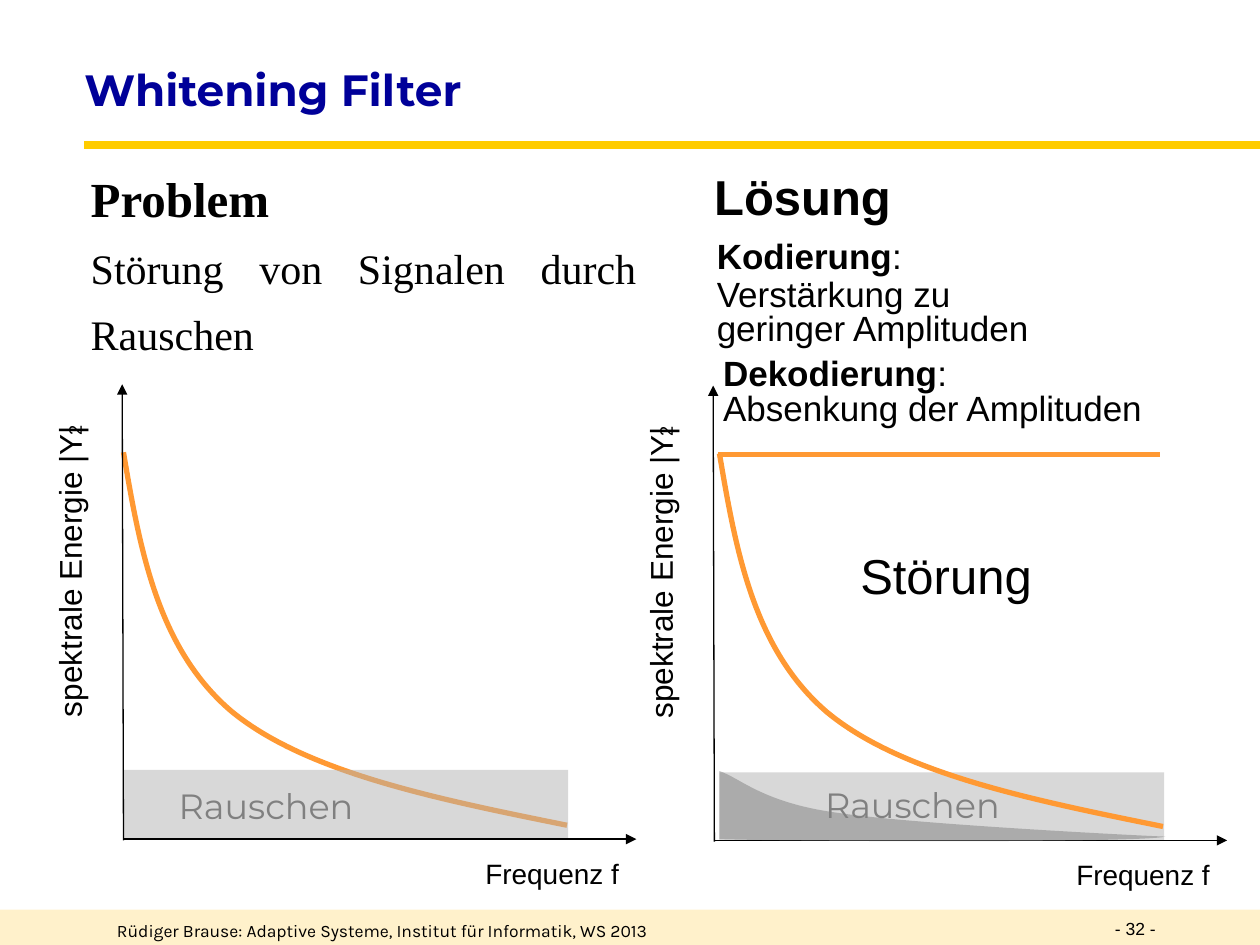
"""Build the slide on the whitening filter with its two spectral plots."""
from dataclasses import dataclass, field
from typing import Any, NamedTuple

import pptx
import pptx.dml.color
import pptx.enum.shapes
import pptx.enum.text
import pptx.oxml.ns
import pptx.util
from lxml import etree

Inches = pptx.util.Inches
Pt = pptx.util.Pt
RGB = pptx.dml.color.RGBColor
Align = pptx.enum.text.PP_ALIGN
Anchor = pptx.enum.text.MSO_ANCHOR
qn = pptx.oxml.ns.qn

BLACK = RGB(0x00, 0x00, 0x00)
NAVY = RGB(0x00, 0x00, 0x99)
GOLD = RGB(0xFF, 0xCC, 0x00)
CREAM = RGB(0xFF, 0xE4, 0x99)
ORANGE = RGB(0xFF, 0x99, 0x33)
SILVER = RGB(0xB2, 0xB2, 0xB2)
GRAY = RGB(0x80, 0x80, 0x80)

Box = tuple[float, float, float, float]
Point = tuple[float, float]


class Run(NamedTuple):
    text: str
    bold: bool = False
    raised: bool = False


@dataclass
class Para:
    runs: list[Run]
    size: float
    form: dict[str, Any] = field(default_factory=dict)


@dataclass
class Label:
    box: Box
    paras: list[Para]
    face: str = "Arial"
    tone: RGB = BLACK
    wrap: bool = True
    upright: bool = False


class Plot(NamedTuple):
    left: float
    base: float
    curve: float
    drop: float
    band: float


NEAR = Plot(0.98, 6.66, 0.98, 3.59, 6.11)
FAR = Plot(5.67, 6.67, 5.71, 3.60, 6.13)
DECAY = [(0, 0), (0.13, 0.77), (0.27, 1.55), (0.85, 2.05),
         (1.44, 2.54), (2.48, 2.75), (3.52, 2.96)]
RESIDUE = [(5.71, 6.12), (5.87, 6.17), (6.05, 6.37), (6.64, 6.45),
           (7.23, 6.54), (8.99, 6.63), (9.25, 6.64),
           (9.05, 6.69), (6.32, 6.68), (5.71, 6.66),
           (5.71, 6.11), (5.71, 6.29), (5.71, 6.12)]
RIGHT = {"alignment": Align.RIGHT}


def line(text: str, size: float, bold: bool = False, **form: Any) -> Para:
    return Para([Run(text, bold)], size, form)


def head(text: str) -> Para:
    return Para([Run(text, True), Run(":")], 20)


LABELS = [
    Label((0.83, 7.25, 5.42, 0.25),
          [line("Rüdiger Brause: Adaptive Systeme, Institut für Informatik, WS 2013", 10)], "Karla"),
    Label((8.75, 7.24, 0.75, 0.26), [line("- 32 -", 10)]),
    Label((5.57, 1.27, 4.23, 0.57), [line("Lösung", 28, True)]),
    Label((5.59, 1.81, 2.69, 1.03), [head("Kodierung")] + [
        line(text, 20, line_spacing=0.4, space_before=Pt(10))
        for text in ("Verstärkung zu", "geringer Amplituden")]),
    Label((5.64, 2.74, 3.54, 0.7), [
        head("Dekodierung"),
        line("Absenkung der Amplituden", 20, line_spacing=0.3, space_before=Pt(10))], wrap=False),
    Label((6.73, 4.28, 1.57, 0.57), [line("Störung", 28)], wrap=False),
    *(Label((left, top, 1.81, 0.43), [line("Rauschen", 20)], "Montserrat", GRAY)
      for left, top in ((1.32, 6.18), (6.45, 6.17))),
]
TITLE = Label((0.67, 0.43, 7.24, 0.55), [
    line("Whitening Filter", 25, True, alignment=Align.LEFT)], "Montserrat", NAVY)
BODY = Label((0.62, 1.29, 4.53, 1.48), [
    line("Problem", 28, True, alignment=Align.JUSTIFY, space_before=Pt(0)),
    line("Störung von Signalen durch Rauschen", 24, alignment=Align.JUSTIFY,
         line_spacing=1.3, space_before=Pt(0))], "Times New Roman")


def apply(item: Any, form: dict[str, Any]) -> None:
    for name, value in form.items():
        setattr(item, name, value)


def write(shape: Any, label: Label) -> None:
    frame = shape.text_frame
    apply(frame, {"word_wrap": label.wrap, "auto_size": pptx.enum.text.MSO_AUTO_SIZE.NONE})
    for index, para in enumerate(label.paras):
        block = frame.add_paragraph() if index else frame.paragraphs[0]
        apply(block, para.form)
        for part in para.runs:
            run = block.add_run()
            run.text = part.text
            apply(run.font, {"name": label.face, "size": Pt(para.size), "bold": part.bold})
            run.font.color.rgb = label.tone
            if part.raised:
                run.font._element.set("baseline", "30000")


def fill_holder(holder: Any, label: Label) -> None:
    apply(holder, dict(zip(("left", "top", "width", "height"), map(Inches, label.box))))
    write(holder, label)


def add_label(shapes: Any, label: Label) -> None:
    shape = shapes.add_textbox(*map(Inches, label.box))
    write(shape, label)
    if label.upright:
        shape.rotation = 180
        shape.text_frame._txBody.bodyPr.set("vert", "eaVert")


def add_line(shapes: Any, start: Point, end: Point, tone: RGB, width: float,
             arrow: bool = False) -> None:
    link = shapes.add_connector(pptx.enum.shapes.MSO_CONNECTOR.STRAIGHT,
                                *map(Inches, start + end))
    apply(link.line, {"width": Pt(width)})
    link.line.color.rgb = tone
    if arrow:
        etree.SubElement(link.line._get_or_add_ln(), qn("a:tailEnd"), type="triangle")
    etree.SubElement(link._element.spPr, qn("a:effectLst"))


def tint(shape: Any, tone: RGB) -> None:
    shape.shadow.inherit = False
    shape.fill.solid()
    shape.fill.fore_color.rgb = tone
    shape.line.fill.background()
    color = shape._element.spPr.find(f"{qn('a:solidFill')}/{qn('a:srgbClr')}")
    etree.SubElement(color, qn("a:alpha"), val="50000")


def add_band(shapes: Any, box: Box, tone: RGB) -> None:
    tint(shapes.add_shape(pptx.enum.shapes.MSO_SHAPE.RECTANGLE, *map(Inches, box)), tone)


def add_path(shapes: Any, nodes: list[Point], close: bool) -> Any:
    spots = [(Inches(x), Inches(y)) for x, y in nodes]
    maker = shapes.build_freeform(*spots[0])
    maker.add_line_segments(spots[1:], close=close)
    shape = maker.convert_to_shape()
    legs = list(shape._element.spPr.iter(qn("a:lnTo")))
    for first in range(0, len(nodes) - 1, 3):
        bend = etree.Element(qn("a:cubicBezTo"))
        legs[first].addprevious(bend)
        for leg in legs[first:first + 3]:
            bend.append(leg[0])
            leg.getparent().remove(leg)
    return shape


def add_curve(shapes: Any, plot: Plot) -> None:
    curve = add_path(shapes, [(plot.curve + x, plot.drop + y) for x, y in DECAY], False)
    curve.shadow.inherit = False
    curve.fill.background()
    curve.line.color.rgb = ORANGE
    curve.line.width = Pt(3)


def add_axes(shapes: Any, plot: Plot) -> None:
    left, base = plot.left, plot.base
    add_line(shapes, (left, base), (left + 4.07, base), BLACK, 0.75, True)
    add_line(shapes, (left, base + 0.01), (left - 0.01, base - 3.61), BLACK, 0.75, True)
    add_label(shapes, Label((left + 2.75, base + 0.09, 1.28, 0.37),
                            [line("Frequenz f", 16, **RIGHT)]))
    add_label(shapes, Label((left - 0.63, base - 3.61, 0.5, 2.81), [
        Para([Run(" spektrale Energie |Y|"), Run("2", raised=True)], 18, RIGHT)], upright=True))


def main() -> None:
    deck = pptx.Presentation()
    apply(deck, {"slide_width": Inches(10), "slide_height": Inches(7.5)})
    slide = deck.slides.add_slide(deck.slide_layouts[1])
    shapes = slide.shapes
    body = slide.placeholders[1]
    fill_holder(shapes.title, TITLE)
    fill_holder(body, BODY)
    apply(shapes.title.text_frame, {"margin_left": 0, "vertical_anchor": Anchor.MIDDLE})
    for block in body.text_frame.paragraphs:
        props = block._p.get_or_add_pPr()
        props.attrib.update({"marL": "0", "indent": "0"})
        etree.SubElement(props, qn("a:buNone"))

    add_band(shapes, (0, 7.22, 10, 0.28), CREAM)
    add_line(shapes, (0.67, 1.15), (10, 1.15), GOLD, 4.5)
    add_curve(shapes, NEAR)
    for plot in (NEAR, FAR):
        add_band(shapes, (plot.curve, plot.band, 3.53, 0.54), SILVER)
        add_axes(shapes, plot)
    tint(add_path(shapes, RESIDUE, True), GRAY)
    add_curve(shapes, FAR)
    add_line(shapes, (5.7, 3.61), (9.21, 3.61), ORANGE, 3)
    for label in LABELS:
        add_label(shapes, label)
    deck.save("out.pptx")


if __name__ == "__main__":
    main()
